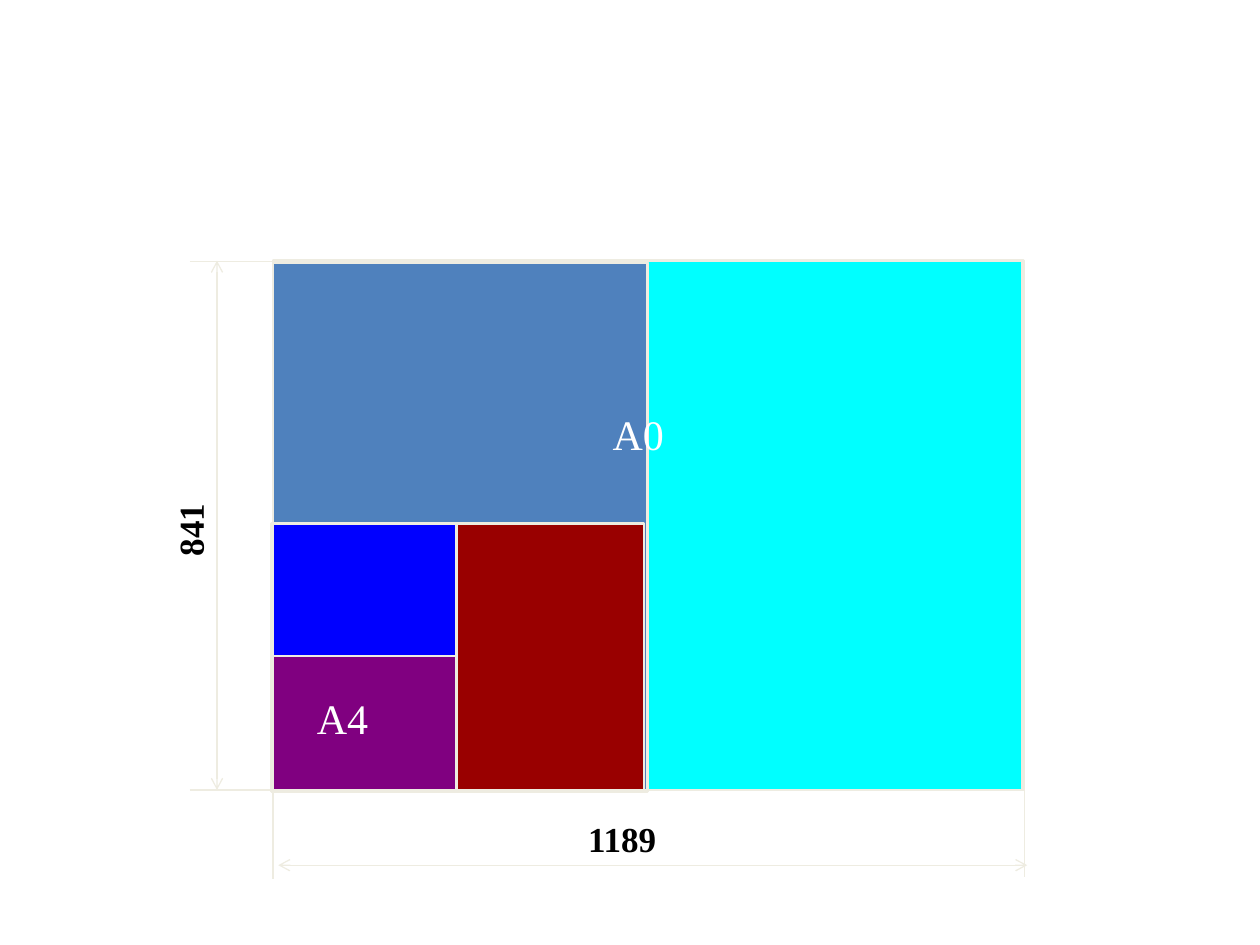
from dataclasses import dataclass

from lxml.etree import SubElement
from pptx import Presentation
from pptx.dml.color import RGBColor
from pptx.enum.shapes import MSO_CONNECTOR, MSO_SHAPE
from pptx.oxml.ns import qn
from pptx.util import Pt


@dataclass(frozen=True)
class Theme:
    font: str = "Times New Roman"
    line: str = "EEECE1"
    white: str = "FFFFFF"
    black: str = "000000"
    half: str = "00FFFF"
    quarter: str = "4F81BD"
    eighth: str = "990000"
    upper: str = "0000FF"
    lower: str = "800080"
    name: int = 24
    size: int = 20
    edge: float = 1.5
    thin: float = 0.75


THEME = Theme()


def color(code):
    return RGBColor.from_string(code)


def add_sheet(slide, box, fill=None):
    shape = slide.shapes.add_shape(MSO_SHAPE.RECTANGLE, *map(Pt, box))
    shape.shadow.inherit = False
    if fill:
        shape.fill.solid()
        shape.fill.fore_color.rgb = color(fill)
    else:
        shape.fill.background()
    shape.line.color.rgb = color(THEME.line)
    shape.line.width = Pt(THEME.edge)


def add_line(slide, start, end, arrows=False):
    line = slide.shapes.add_connector(
        MSO_CONNECTOR.STRAIGHT, *map(Pt, (*start, *end)))
    line.line.color.rgb = color(THEME.line)
    line.line.width = Pt(THEME.thin)
    if arrows:
        for end_tag in ("a:headEnd", "a:tailEnd"):
            SubElement(line.line._get_or_add_ln(), qn(end_tag), type="arrow")
    SubElement(line._element.spPr, qn("a:effectLst"))


def add_label(slide, box, text, size, code, bold=False, turn=0):
    label = slide.shapes.add_textbox(*map(Pt, box))
    label.rotation = turn
    label.text_frame.word_wrap = True
    run = label.text_frame.paragraphs[0].add_run()
    run.text = text
    run.font.name = THEME.font
    run.font.size = Pt(size)
    run.font.bold = bold
    run.font.color.rgb = color(code)


def add_sheets(slide, box):
    left, top, width, height = box
    half, mid = width / 2, height / 2
    add_sheet(slide, (left + 1, top, width, height), THEME.half)
    add_sheet(slide, (left, top + 1, half, height), THEME.quarter)
    add_sheet(slide, (left + 2, top + mid - 1, half - 4, mid + 2), THEME.eighth)
    add_sheet(slide, (left - 1, top + mid - 1, half / 2 - 1, mid - 1), THEME.upper)
    add_sheet(slide, (left - 1, top + mid * 1.5 - 1, half / 2 - 1, mid / 2 + 2),
              THEME.lower)


def add_names(slide, box):
    left, top, width, height = box
    for text, x, y in (("A0", 187, 81), ("A4", 18, 243)):
        add_label(slide, (left + x, top + y, 56, 37), text,
                  THEME.name, THEME.white)


def add_width(slide, box):
    left, top, width, height = box
    right, base = left + width, top + height
    add_line(slide, (left, base), (left, base + 51))
    add_line(slide, (right + 1.5, base - 1), (right + 1.5, base + 50))
    add_line(slide, (left + 3, base + 43), (right + 3, base + 43), True)
    add_label(slide, (left + 173, base + 12, 86, 32), "1189",
              THEME.size, THEME.black, True)


def add_height(slide, box):
    left, top, width, height = box
    base = top + height
    for y in (base, top + 0.5):
        add_line(slide, (left - 47.5, y), (left + 4, y))
    add_line(slide, (left - 32, base), (left - 32, top), True)
    add_label(slide, (left - 79.5, top + 127.5, 65, 32), "841",
              THEME.size, THEME.black, True, 270)


def main():
    deck = Presentation()
    deck.slide_width, deck.slide_height = Pt(720), Pt(540)
    slide = deck.slides.add_slide(deck.slide_layouts[6])
    box = (156, 149, 428, 302.4)
    add_sheets(slide, box)
    add_width(slide, box)
    add_height(slide, box)
    add_names(slide, box)
    add_sheet(slide, box)
    deck.save("out.pptx")


if __name__ == "__main__":
    main()
